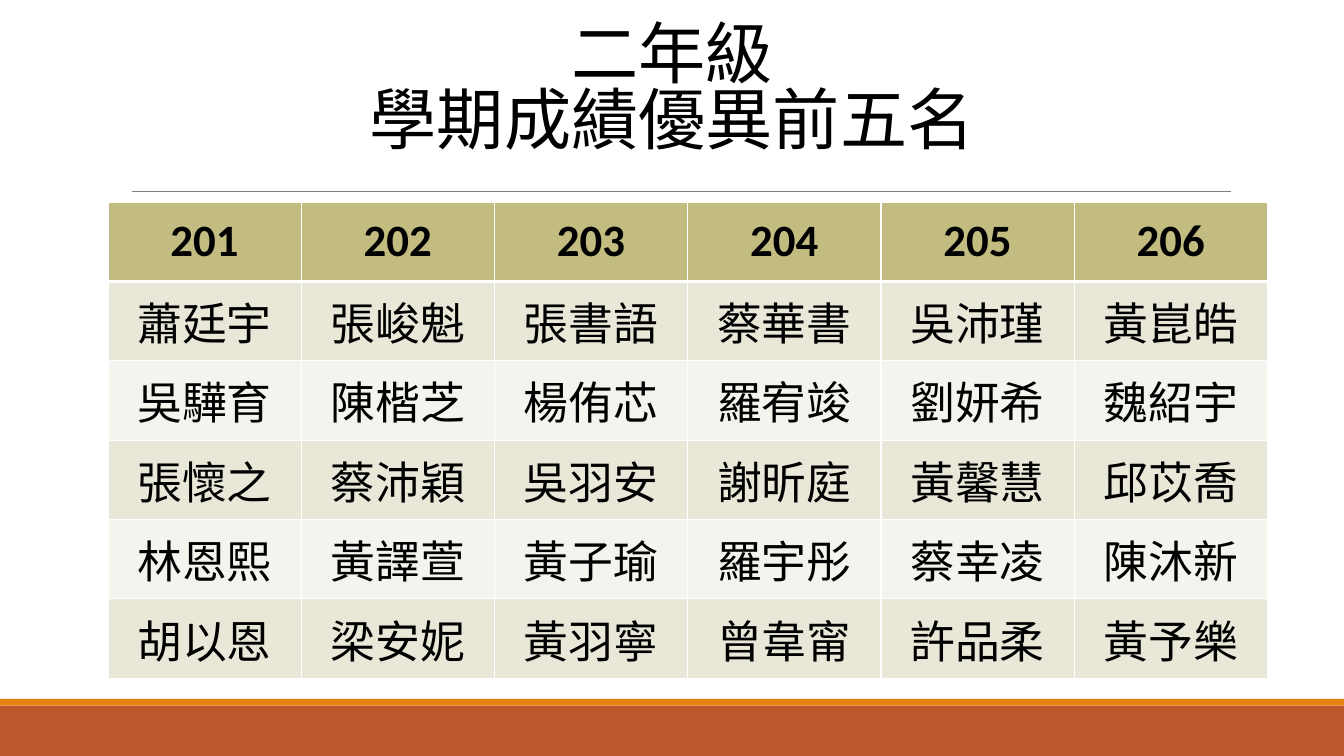
import pptx
import pptx.dml.color
import pptx.enum.shapes
import pptx.enum.text
import pptx.oxml.ns
import pptx.util
from lxml import etree
from pptx.util import Cm, Pt

RGBColor = pptx.dml.color.RGBColor

TITLE_LINES = ["二年級", "學期成績優異前五名"]
ROWS = [
    ["201", "202", "203", "204", "205", "206"],
    ["蕭廷宇", "張峻魁", "張書語", "蔡華書", "吳沛瑾", "黃崑皓"],
    ["吳驊育", "陳楷芝", "楊侑芯", "羅宥竣", "劉妍希", "魏紹宇"],
    ["張懷之", "蔡沛穎", "吳羽安", "謝昕庭", "黃馨慧", "邱苡喬"],
    ["林恩熙", "黃譯萱", "黃子瑜", "羅宇彤", "蔡幸凌", "陳沐新"],
    ["胡以恩", "梁安妮", "黃羽寧", "曾韋甯", "許品柔", "黃予樂"],
]

BLACK = RGBColor(0x00, 0x00, 0x00)
WHITE = RGBColor(0xFF, 0xFF, 0xFF)
GRAY = RGBColor(0x80, 0x80, 0x80)
RUST = RGBColor(0xBD, 0x58, 0x2C)
ORANGE = RGBColor(0xE4, 0x83, 0x12)
HEADER_FILL = RGBColor(0xC2, 0xBC, 0x80)
BAND_FILLS = [RGBColor(0xF4, 0xF3, 0xED), RGBColor(0xE9, 0xE7, 0xD8)]

HEADER_FONT = "Calibri"
NAME_FONT = "Noto Sans CJK SC"
TITLE_FONT = "Noto Sans CJK JP"

SLIDE_WIDTH, SLIDE_HEIGHT = Cm(33.87), Cm(19.05)
FOOTER_TOP, FOOTER_STRIPE = Cm(17.78), Cm(0.17)
TABLE_LEFT, TABLE_TOP = Cm(2.72), Cm(5.09)
COLUMN_WIDTH, ROW_HEIGHT = Cm(4.87), Cm(2)
NAME_MARGIN = Cm(0.03)


def add_run(paragraph, text, font_name, size, bold=False):
    """Add a centred black run, with the font set for Latin and East Asian text."""
    paragraph.alignment = pptx.enum.text.PP_ALIGN.CENTER
    run = paragraph.add_run()
    run.text = text
    run.font.size = Pt(size)
    run.font.bold = bold
    run.font.color.rgb = BLACK
    run.font.name = font_name
    properties = run._r.get_or_add_rPr()
    etree.SubElement(properties, pptx.oxml.ns.qn("a:ea"), typeface=font_name)


def add_band(slide, top, height, color):
    band = slide.shapes.add_shape(
        pptx.enum.shapes.MSO_SHAPE.RECTANGLE, 0, top, SLIDE_WIDTH, height)
    band.shadow.inherit = False
    band.fill.solid()
    band.fill.fore_color.rgb = color
    band.line.fill.background()


def add_title_rule(slide):
    rule = slide.shapes.add_connector(
        pptx.enum.shapes.MSO_CONNECTOR.STRAIGHT, Cm(3.32), Cm(4.82), Cm(31.01), Cm(4.82))
    rule.line.color.rgb = GRAY
    rule.line.width = Pt(0.5)
    etree.SubElement(rule._element.spPr, pptx.oxml.ns.qn("a:effectLst"))


def set_borders(cell, widths):
    """Draw white borders; widths maps an edge tag to points."""
    properties = cell._tc.get_or_add_tcPr()
    for edge, width in widths.items():
        line = etree.SubElement(properties, pptx.oxml.ns.qn(edge), w=str(Pt(width)))
        fill = etree.SubElement(line, pptx.oxml.ns.qn("a:solidFill"))
        etree.SubElement(fill, pptx.oxml.ns.qn("a:srgbClr"), val=str(WHITE))


def fill_cell(cell, text, row_index):
    is_header = row_index == 0
    set_borders(cell, {
        "a:lnL": 1,
        "a:lnR": 1,
        "a:lnT": 3 if row_index == 1 else 1,
        "a:lnB": 3 if is_header else 1,
    })
    cell.fill.solid()
    cell.fill.fore_color.rgb = HEADER_FILL if is_header else BAND_FILLS[row_index % 2]
    cell.vertical_anchor = pptx.enum.text.MSO_ANCHOR.MIDDLE
    if not is_header:
        cell.margin_left = cell.margin_right = NAME_MARGIN
        cell.margin_top = cell.margin_bottom = NAME_MARGIN
    font_name = HEADER_FONT if is_header else NAME_FONT
    add_run(cell.text_frame.paragraphs[0], text, font_name, 32, is_header)


def add_honour_table(slide):
    column_count = len(ROWS[0])
    table = slide.shapes.add_table(
        len(ROWS), column_count, TABLE_LEFT, TABLE_TOP,
        COLUMN_WIDTH * column_count, ROW_HEIGHT * len(ROWS)).table
    for column in table.columns:
        column.width = COLUMN_WIDTH
    for row_index, names in enumerate(ROWS):
        table.rows[row_index].height = ROW_HEIGHT
        for column_index, name in enumerate(names):
            fill_cell(table.cell(row_index, column_index), name, row_index)


def add_title(slide):
    title = slide.shapes.add_textbox(Cm(8.99), Cm(0.53), Cm(15.9), Cm(4.37))
    frame = title.text_frame
    frame.word_wrap = False
    for index, line in enumerate(TITLE_LINES):
        paragraph = frame.add_paragraph() if index else frame.paragraphs[0]
        paragraph.line_spacing = 0.82
        add_run(paragraph, line, TITLE_FONT, 48)


def main():
    presentation = pptx.Presentation()
    presentation.slide_width = SLIDE_WIDTH
    presentation.slide_height = SLIDE_HEIGHT
    slide = presentation.slides.add_slide(presentation.slide_layouts[6])
    add_band(slide, FOOTER_TOP, SLIDE_HEIGHT - FOOTER_TOP, RUST)
    add_band(slide, FOOTER_TOP - FOOTER_STRIPE, FOOTER_STRIPE, ORANGE)
    add_title_rule(slide)
    add_honour_table(slide)
    add_title(slide)
    presentation.save("out.pptx")


if __name__ == "__main__":
    main()
